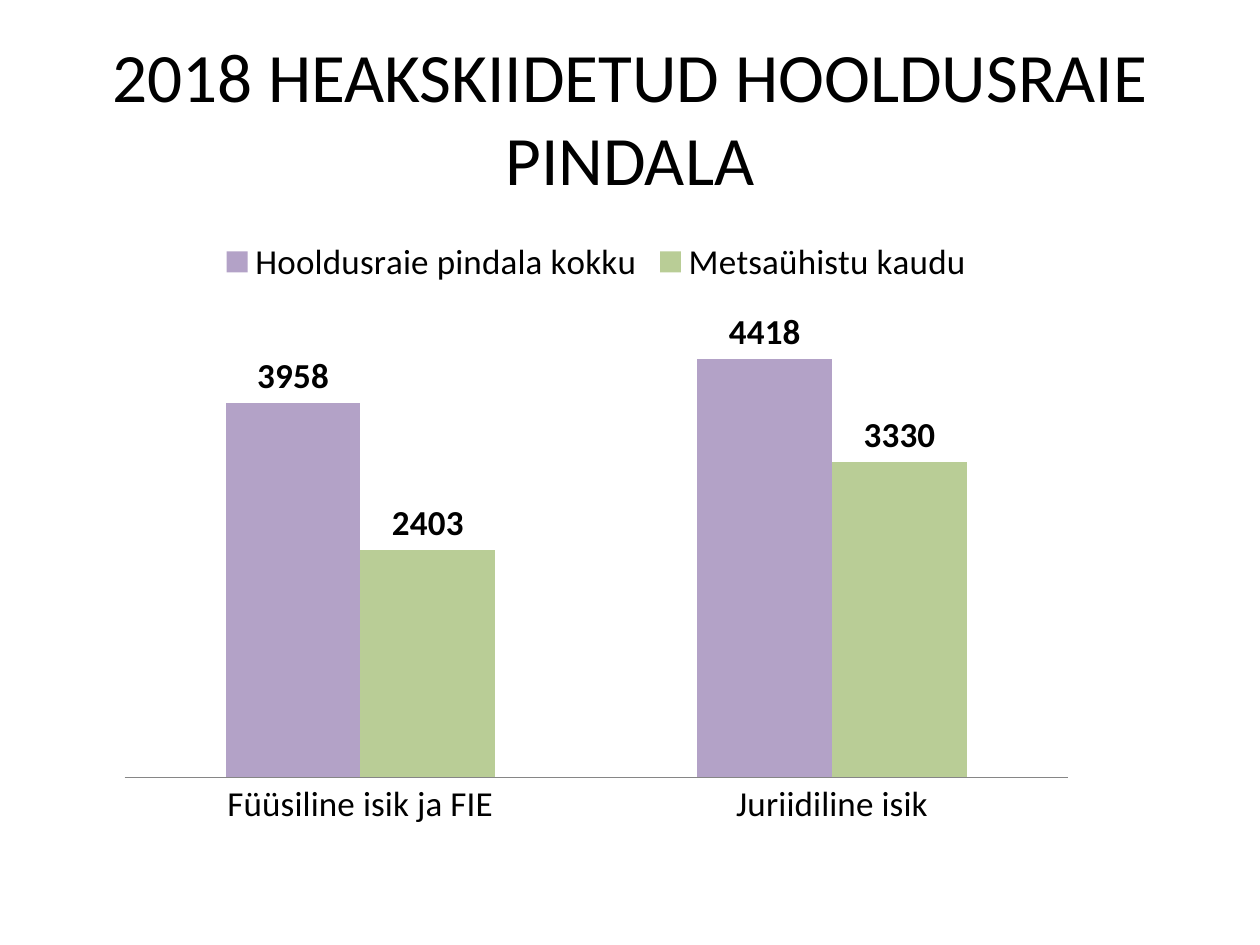
from dataclasses import dataclass

import pptx
import pptx.chart.data
import pptx.dml.color
import pptx.enum.chart
import pptx.enum.text
import pptx.oxml
import pptx.oxml.ns
import pptx.util

Pt = pptx.util.Pt
RGB = pptx.dml.color.RGBColor.from_string


@dataclass(frozen=True)
class Theme:
    font: str = "Calibri"
    text: str = "000000"
    axis: str = "868686"
    bars: tuple = ("B3A2C7", "B9CD96")
    title_size: float = 39.6
    chart_size: float = 20


THEME = Theme()

CATEGORIES = ["Füüsiline isik ja FIE", "Juriidiline isik"]
SERIES = {
    "Hooldusraie pindala kokku": (3958, 4418),
    "Metsaühistu kaudu": (2403, 3330),
}


def style_font(font, size, bold=False):
    font.name = THEME.font
    font.size = Pt(size)
    font.bold = bold
    font.color.rgb = RGB(THEME.text)


def add_title(s, text, left, top, width, height):
    tf = s.shapes.add_textbox(Pt(left), Pt(top), Pt(width), Pt(height)).text_frame
    tf.word_wrap = True
    tf.vertical_anchor = pptx.enum.text.MSO_ANCHOR.MIDDLE
    p = tf.paragraphs[0]
    p.alignment = pptx.enum.text.PP_ALIGN.CENTER
    r = p.add_run()
    r.text = text
    style_font(r.font, THEME.title_size)


def set_plot_layout(chart, x, y, w, h):
    """Fix the inner plot area, in fractions of the chart box."""
    plot_area = chart.plots[0]._element.getparent()
    for old in plot_area.findall(pptx.oxml.ns.qn("c:layout")):
        plot_area.remove(old)
    plot_area.insert(0, pptx.oxml.parse_xml(
        f'<c:layout {pptx.oxml.ns.nsdecls("c")}><c:manualLayout>'
        '<c:layoutTarget val="inner"/><c:xMode val="edge"/><c:yMode val="edge"/>'
        f'<c:x val="{x}"/><c:y val="{y}"/><c:w val="{w}"/><c:h val="{h}"/>'
        '</c:manualLayout></c:layout>'))


def add_area_chart(s, left, top, width, height):
    """Clustered columns of the approved thinning area by owner type."""
    data = pptx.chart.data.CategoryChartData(number_format="0")
    data.categories = CATEGORIES
    for name, values in SERIES.items():
        data.add_series(name, values)
    chart = s.shapes.add_chart(
        pptx.enum.chart.XL_CHART_TYPE.COLUMN_CLUSTERED,
        Pt(left), Pt(top), Pt(width), Pt(height), data).chart
    style_font(chart.font, THEME.chart_size)
    chart.has_title = False

    chart.has_legend = True
    chart.legend.position = pptx.enum.chart.XL_LEGEND_POSITION.TOP
    chart.legend.include_in_layout = False
    style_font(chart.legend.font, THEME.chart_size)

    axis = chart.category_axis
    axis.major_tick_mark = pptx.enum.chart.XL_TICK_MARK.NONE
    axis.format.line.color.rgb = RGB(THEME.axis)
    style_font(axis.tick_labels.font, THEME.chart_size)

    axis = chart.value_axis
    axis.visible = False
    axis.has_major_gridlines = False
    axis.minimum_scale, axis.maximum_scale = 0, 5000

    plot = chart.plots[0]
    plot.gap_width = 150
    plot.vary_by_categories = False
    for series, color in zip(plot.series, THEME.bars):
        series.format.fill.solid()
        series.format.fill.fore_color.rgb = RGB(color)
        labels = series.data_labels
        labels.show_value = True
        labels.number_format = "0"
        labels.number_format_is_linked = False
        labels.position = pptx.enum.chart.XL_LABEL_POSITION.OUTSIDE_END
        style_font(labels.font, THEME.chart_size, bold=True)
    set_plot_layout(chart, 0.02, 0.13, 0.96, 0.77)


def main():
    prs = pptx.Presentation()
    prs.slide_width, prs.slide_height = Pt(720), Pt(540)
    s = prs.slides.add_slide(prs.slide_layouts[6])
    add_title(s, "2018 HEAKSKIIDETUD HOOLDUSRAIE PINDALA", 36, 21.6, 648, 90)
    add_area_chart(s, 60, 128, 561.6, 351.4)
    prs.save("out.pptx")


if __name__ == "__main__":
    main()
